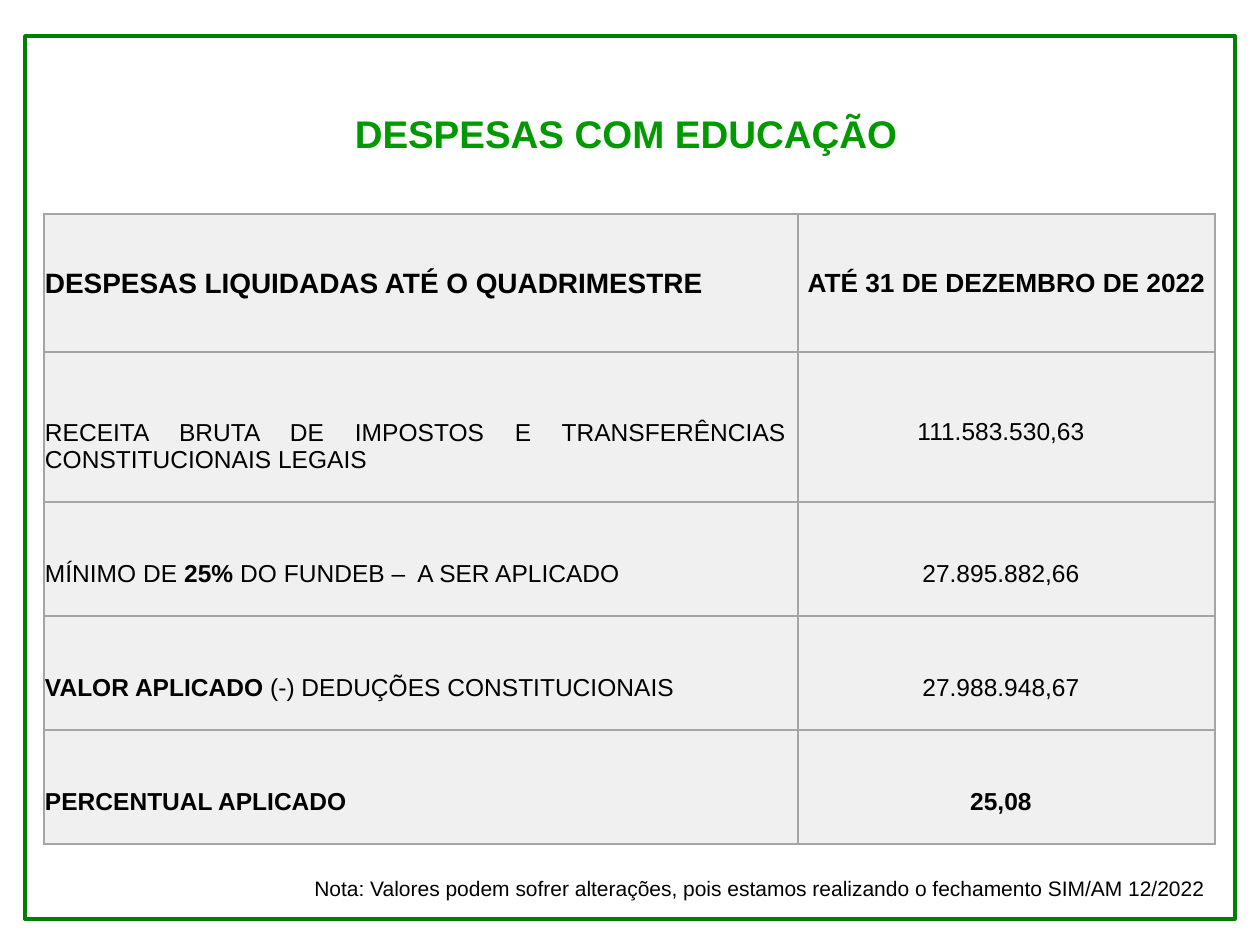
from dataclasses import dataclass

from lxml.etree import SubElement
from pptx import Presentation
from pptx.dml.color import RGBColor as Rgb
from pptx.enum.shapes import MSO_SHAPE as Shape
from pptx.enum.text import MSO_ANCHOR as Anchor, MSO_AUTO_SIZE as AutoSize, PP_ALIGN as Align
from pptx.oxml.ns import qn
from pptx.util import Emu, Pt

TITLE = "DESPESAS COM EDUCAÇÃO"
HEADINGS = ("DESPESAS LIQUIDADAS ATÉ O QUADRIMESTRE", "ATÉ 31 DE DEZEMBRO DE 2022")
EXPENSES = [
    ([("RECEITA BRUTA DE IMPOSTOS E TRANSFERÊNCIAS CONSTITUCIONAIS LEGAIS", False)],
     ("111.583.530,63", False)),
    ([("MÍNIMO DE ", False), ("25% ", True), ("DO FUNDEB –  A SER APLICADO", False)],
     ("27.895.882,66", False)),
    ([("VALOR APLICADO ", True), ("(-) DEDUÇÕES CONSTITUCIONAIS", False)],
     ("27.988.948,67", False)),
    ([("PERCENTUAL APLICADO", True)], ("25,08", True)),
]
NOTE = "Nota: Valores podem sofrer alterações, pois estamos realizando o fechamento SIM/AM 12/2022"

FRAME_BOX = (25, 36, 1210, 883)
TITLE_BOX = (115, 66, 1022, 97)
NOTE_BOX = (302, 869, 922, 38)
TABLE_ORIGIN = (44, 214)
COLUMN_WIDTHS = (754, 417)
ROW_HEIGHTS = (138, 150, 114, 114, 114)
LINE_GAP = 28


@dataclass(frozen=True)
class Theme:
    font: str = "Arial"
    frame: str = "008000"
    title: str = "009900"
    text: str = "000000"
    cell: str = "F0F0F0"
    border: str = "A5A5A5"
    title_size: int = 22
    heading_sizes: tuple = (16, 15)
    body_size: int = 14
    note_size: int = 12


THEME = Theme()


def px(length):
    return Emu(round(length * 914400 / 126))


def box(bounds):
    return [px(length) for length in bounds]


def style(paragraph, size, color=THEME.text, bold=None, align=Align.LEFT):
    paragraph.alignment = align
    font = paragraph.font
    font.name, font.size, font.bold = THEME.font, Pt(size), bold
    font.color.rgb = Rgb.from_string(color)


def add_borders(cell):
    properties = cell._tc.get_or_add_tcPr()
    for position, side in enumerate(("a:lnL", "a:lnR", "a:lnT", "a:lnB")):
        line = SubElement(properties, qn(side), w=str(Pt(1)))
        fill = SubElement(line, qn("a:solidFill"))
        SubElement(fill, qn("a:srgbClr"), val=THEME.border)
        properties.insert(position, line)


def format_cell(cell, anchor, right=1, bottom=0):
    cell.fill.solid()
    cell.fill.fore_color.rgb = Rgb.from_string(THEME.cell)
    cell.vertical_anchor = anchor
    cell.margin_left = cell.margin_top = px(1)
    cell.margin_right, cell.margin_bottom = px(right), px(bottom)
    add_borders(cell)


def add_title(slide):
    title = slide.shapes.title
    title.left, title.top, title.width, title.height = box(TITLE_BOX)
    frame = title.text_frame
    frame.text = TITLE
    frame.auto_size = AutoSize.NONE
    frame.vertical_anchor = Anchor.BOTTOM
    style(frame.paragraphs[0], THEME.title_size, THEME.title, True, Align.CENTER)


def add_frame(slide):
    border = slide.shapes.add_shape(Shape.RECTANGLE, *box(FRAME_BOX))
    border.shadow.inherit = False
    border.fill.background()
    border.line.color.rgb = Rgb.from_string(THEME.frame)
    border.line.width = Pt(2)


def add_expenses(slide):
    size = (sum(COLUMN_WIDTHS), sum(ROW_HEIGHTS))
    table = slide.shapes.add_table(len(ROW_HEIGHTS), len(COLUMN_WIDTHS),
                                   *box(TABLE_ORIGIN + size)).table
    for column, width in zip(table.columns, COLUMN_WIDTHS):
        column.width = px(width)
    for row, height in zip(table.rows, ROW_HEIGHTS):
        row.height = px(height)

    for column, heading in enumerate(HEADINGS):
        cell = table.cell(0, column)
        cell.text = heading
        format_cell(cell, Anchor.MIDDLE)
        style(cell.text_frame.paragraphs[0], THEME.heading_sizes[column], bold=True,
              align=(Align.LEFT, Align.CENTER)[column])

    for row, (label, amount) in enumerate(EXPENSES, start=1):
        for column, parts in enumerate((label, [amount])):
            cell = table.cell(row, column)
            gaps = 2 if (row, column) == (1, 1) else 1
            format_cell(cell, Anchor.BOTTOM, right=12, bottom=gaps * LINE_GAP)
            paragraph = cell.text_frame.paragraphs[0]
            style(paragraph, THEME.body_size, align=(Align.JUSTIFY, Align.CENTER)[column])
            for text, bold in parts:
                run = paragraph.add_run()
                run.text, run.font.bold = text, bold


def add_note(slide):
    frame = slide.shapes.add_textbox(*box(NOTE_BOX)).text_frame
    frame.word_wrap = True
    frame.text = NOTE
    style(frame.paragraphs[0], THEME.note_size)


def main():
    deck = Presentation()
    deck.slide_width, deck.slide_height = px(1260), px(945)
    slide = deck.slides.add_slide(deck.slide_layouts[5])
    add_frame(slide)
    add_title(slide)
    add_expenses(slide)
    add_note(slide)
    deck.save("out.pptx")


if __name__ == "__main__":
    main()
